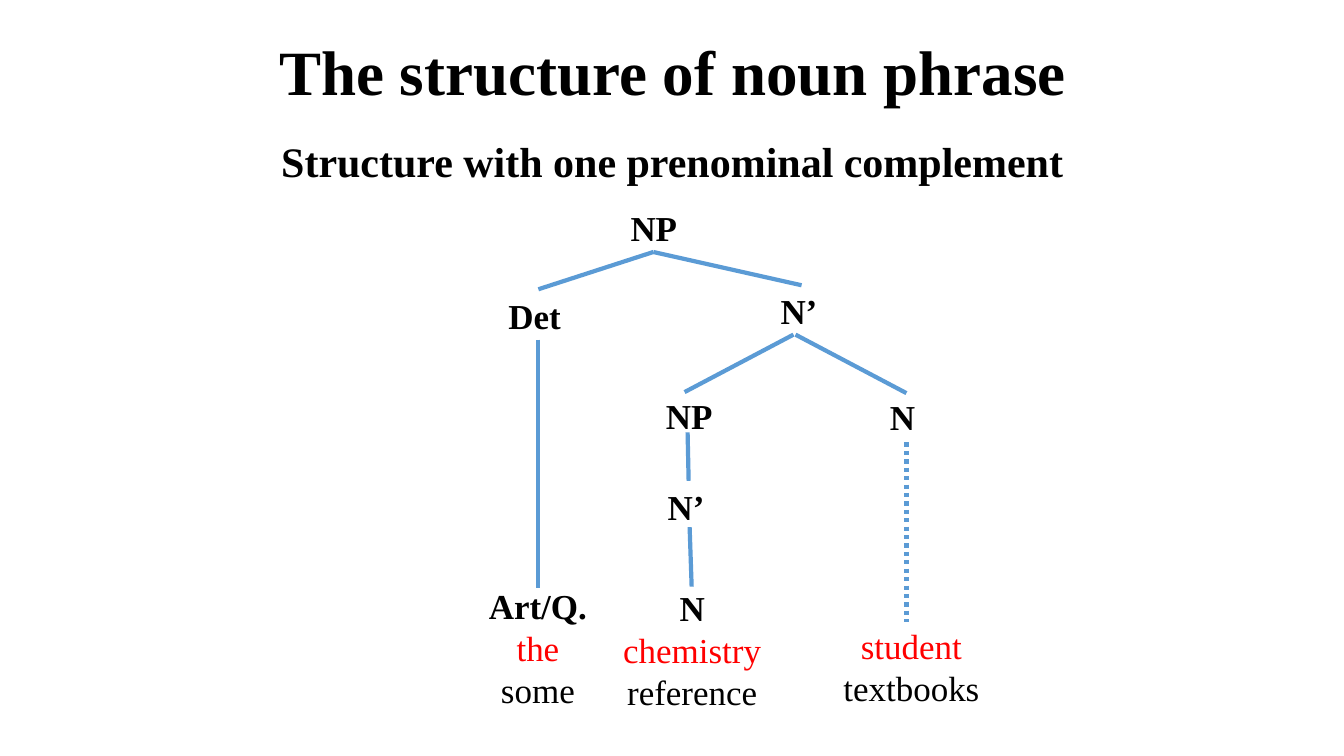
"""Build a slide with the syntax tree of a noun phrase."""
from lxml.etree import SubElement
from pptx import Presentation
from pptx.dml.color import RGBColor
from pptx.enum.dml import MSO_LINE
from pptx.enum.shapes import MSO_CONNECTOR
from pptx.enum.text import MSO_ANCHOR, MSO_AUTO_SIZE, PP_ALIGN
from pptx.oxml.ns import qn
from pptx.util import Pt

PX = 9144
FONT = "Times New Roman"
BLACK = RGBColor(0x00, 0x00, 0x00)
RED = RGBColor(0xFF, 0x00, 0x00)
BLUE = RGBColor(0x5B, 0x9B, 0xD5)

CATEGORIES = [
    ("NP", (605, 200, 87, 51)),
    ("Det ", (456, 287, 157, 51)),
    ("N’ ", (717, 283, 157, 51)),
    ("NP", (640, 381, 87, 62)),
    ("N ", (821, 388, 157, 51)),
    ("N’ ", (605, 477, 157, 51)),
]
WORDS = [
    ("Art/Q.", "the", "some", (463, 583, 141, 118)),
    ("N", "chemistry", "reference", (600, 579, 173, 130)),
    (None, "student", "textbooks", (816, 622, 176, 79)),
]
BRANCHES = [
    (648, 250, 534, 287),
    (648, 250, 795, 283),
    (787, 332, 679, 389),
    (789, 332, 899, 390),
    (682, 429, 683, 477),
    (684, 523, 686, 582),
    (534, 337, 534, 583),
]
OMITTED_LEVELS = (899, 439, 899, 617)


def emu(lengths):
    """Turn lengths in px into EMU."""
    return [length * PX for length in lengths]


def format_paragraph(paragraph, size, color=BLACK, bold=True):
    """Centre a paragraph and style its runs."""
    paragraph.alignment = PP_ALIGN.CENTER
    for run in paragraph.runs:
        run.font.name = FONT
        run.font.size = Pt(size)
        run.font.bold = bold
        run.font.color.rgb = color


def fill_placeholder(heading, text, box, size):
    """Move a placeholder and give it one centred bold line."""
    heading.left, heading.top, heading.width, heading.height = emu(box)
    frame = heading.text_frame
    frame.text = text
    frame.auto_size = MSO_AUTO_SIZE.NONE
    line = frame.paragraphs[0]
    line.line_spacing = 0.9
    format_paragraph(line, size)
    return line


def remove_bullet(line):
    """Drop the bullet and the hanging indent of a paragraph."""
    properties = line._p.get_or_add_pPr()
    properties.set("marL", "0")
    properties.set("indent", "0")
    SubElement(properties, qn("a:buNone"))


def add_node(slide, box, lines):
    """Add a tree node from (text, color, bold) lines."""
    frame = slide.shapes.add_textbox(*emu(box)).text_frame
    frame.word_wrap = True
    frame.vertical_anchor = MSO_ANCHOR.MIDDLE
    frame.text = "\n".join(text for text, _, _ in lines)
    for paragraph, (_, color, bold) in zip(frame.paragraphs, lines):
        format_paragraph(paragraph, 25, color, bold)


def add_branch(slide, ends):
    """Add a branch of the tree."""
    branch = slide.shapes.add_connector(MSO_CONNECTOR.STRAIGHT, *emu(ends))
    branch.line.color.rgb = BLUE
    branch.line.width = Pt(3)
    SubElement(branch._element.spPr, qn("a:effectLst"))
    return branch


def main():
    """Build and save the slide."""
    deck = Presentation()
    deck.slide_width, deck.slide_height = emu((1333, 750))
    slide = deck.slides.add_slide(deck.slide_layouts[1])
    title, body = slide.placeholders
    fill_placeholder(title, "The structure of noun phrase", (92, 40, 1150, 70), 45)
    subtitle = fill_placeholder(
        body, "Structure with one prenominal complement", (92, 135, 1150, 592), 30)
    subtitle.space_before = Pt(10)
    remove_bullet(subtitle)

    for category, box in CATEGORIES:
        add_node(slide, box, [(category, BLACK, True)])
    for category, first, second, box in WORDS:
        head = [(category, BLACK, True)] if category else []
        add_node(slide, box, head + [(first, RED, False), (second, BLACK, False)])
    for ends in BRANCHES:
        add_branch(slide, ends)
    add_branch(slide, OMITTED_LEVELS).line.dash_style = MSO_LINE.ROUND_DOT

    deck.save("out.pptx")


if __name__ == "__main__":
    main()
